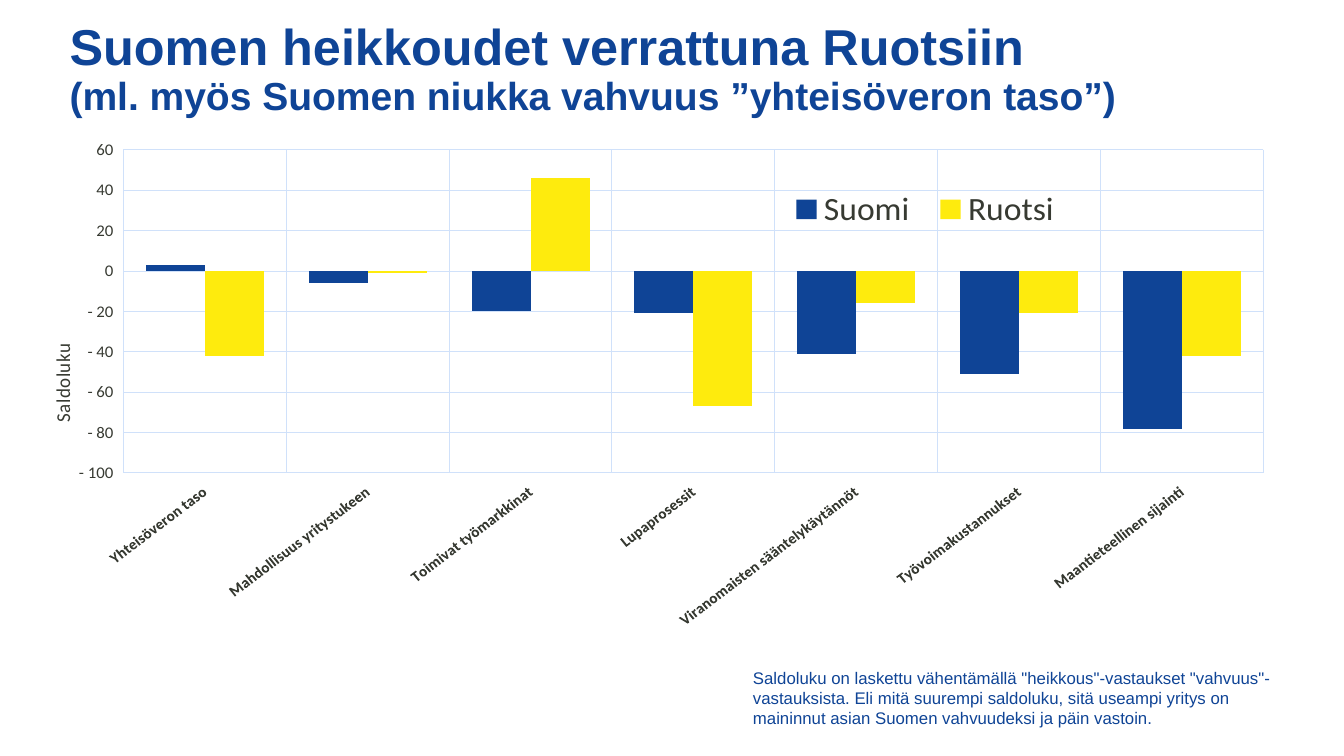
from lxml import etree
from pptx import Presentation
from pptx.chart.data import CategoryChartData
from pptx.dml.color import RGBColor
from pptx.enum.chart import XL_CHART_TYPE, XL_LEGEND_POSITION, XL_TICK_LABEL_POSITION, XL_TICK_MARK
from pptx.enum.text import MSO_ANCHOR, PP_ALIGN
from pptx.oxml.ns import qn
from pptx.util import Inches, Pt

COLUMNS = XL_CHART_TYPE.COLUMN_CLUSTERED
BOTTOM = XL_LEGEND_POSITION.BOTTOM
LABELS_LOW = XL_TICK_LABEL_POSITION.LOW
NO_TICKS = XL_TICK_MARK.NONE
TOP, MIDDLE = MSO_ANCHOR.TOP, MSO_ANCHOR.MIDDLE
LEFT = PP_ALIGN.LEFT
TITLE_ONLY = 5

COLORS = {"blue": "0F4496", "yellow": "FEEB0D", "text": "373A32", "grid": "D0E1FA"}

TITLE = [("Suomen heikkoudet verrattuna Ruotsiin", 36),
         ("(ml. myös Suomen niukka vahvuus ”yhteisöveron taso”)", 27.9)]
NOTE = ('Saldoluku on laskettu vähentämällä "heikkous"-vastaukset "vahvuus"-vastauksista. '
        "Eli mitä suurempi saldoluku, sitä useampi yritys on maininnut asian "
        "Suomen vahvuudeksi ja päin vastoin.")
AXIS_TITLE = "Saldoluku"
BALANCES = [  # factor, Suomi, Ruotsi
    ("Yhteisöveron taso", 3, -42),
    ("Mahdollisuus yritystukeen", -6, -1),
    ("Toimivat työmarkkinat", -20, 46),
    ("Lupaprosessit", -21, -67),
    ("Viranomaisten sääntelykäytännöt", -41, -16),
    ("Työvoimakustannukset", -51, -21),
    ("Maantieteellinen sijainti", -78, -42),
]
COUNTRIES = [("Suomi", "blue"), ("Ruotsi", "yellow")]

# Left, top, width, height in inches
TITLE_BOX = (0.59, 0.22, 12.36, 1.45)
CHART_BOX = (0.45, 1.37, 12.29, 4.87)
NOTE_BOX = (7.37, 6.72, 5.37, 0.4)
# Shares of the chart's size
PLOT_AREA = {"x": 0.063, "y": 0.025, "w": 0.92, "h": 0.68}
LEGEND_AREA = {"x": 0.59, "y": 0.1, "w": 0.24, "h": 0.1}
AXIS_TITLE_AREA = {"x": 0, "y": 0.43}


def color(name):
    return RGBColor.from_string(COLORS[name])


def style(font, size, name="text", face="Calibri", bold=False):
    font.size, font.name, font.bold = Pt(size), face, bold
    font.color.rgb = color(name)


def write(shape, lines, anchor=MIDDLE, spacing=None, bold=False):
    """Fill a shape with one paragraph of (text, size) lines."""
    frame = shape.text_frame
    frame.word_wrap = True
    frame.vertical_anchor = anchor
    para = frame.paragraphs[0]
    para.alignment, para.line_spacing = LEFT, spacing
    for index, (text, size) in enumerate(lines):
        if index:
            para.add_line_break()
        span = para.add_run()
        span.text = text
        style(span.font, size, "blue", "Arial", bold)
    return frame


def place(element, area, inner=False):
    """Give a chart part a manual layout in shares of the chart."""
    for old in element.findall(qn("c:layout")):
        element.remove(old)
    layout = etree.Element(qn("c:layout"))
    manual = etree.SubElement(layout, qn("c:manualLayout"))
    settings = [("layoutTarget", "inner")] if inner else []
    settings += [("xMode", "edge"), ("yMode", "edge"), *area.items()]
    for tag, value in settings:
        etree.SubElement(manual, qn("c:" + tag)).set("val", str(value))
    before = [child for child in element
              if child.tag in (qn("c:tx"), qn("c:legendPos"))]
    element.insert(len(before), layout)


def rotate(body, degrees):
    body.set("rot", str(degrees * 60000))
    body.set("vert", "horz")


def style_axis(axis, size, bold=False):
    axis.major_tick_mark = axis.minor_tick_mark = NO_TICKS
    axis.tick_label_position = LABELS_LOW
    style(axis.tick_labels.font, size, bold=bold)
    axis.has_major_gridlines = True
    for line in (axis.major_gridlines.format.line, axis.format.line):
        line.color.rgb = color("grid")
        line.width = Pt(0.75)


def add_balance_chart(page):
    data = CategoryChartData()
    factors, *values = zip(*BALANCES)
    data.categories = factors
    for (country, _), series_values in zip(COUNTRIES, values):
        data.add_series(country, series_values)
    chart = page.shapes.add_chart(COLUMNS, *map(Inches, CHART_BOX), data).chart
    style(chart.font, 10)
    chart.has_title = False

    plot = chart.plots[0]
    place(plot._element.getparent(), PLOT_AREA, inner=True)
    plot.gap_width, plot.overlap = 76, 0
    plot.vary_by_categories = False
    for series, (_, name) in zip(plot.series, COUNTRIES):
        series.invert_if_negative = False
        series.format.fill.solid()
        series.format.fill.fore_color.rgb = color(name)

    factor_axis, balance_axis = chart.category_axis, chart.value_axis
    style_axis(factor_axis, 11, bold=True)
    rotate(factor_axis._element.find(qn("c:txPr")).find(qn("a:bodyPr")), -38)

    style_axis(balance_axis, 12)
    balance_axis.format.line.fill.background()
    balance_axis.minimum_scale, balance_axis.maximum_scale = -100, 60
    balance_axis.major_unit = 20
    balance_axis.tick_labels.number_format = '0;"- "0;0'
    balance_axis.tick_labels.number_format_is_linked = False
    title = balance_axis.axis_title
    title.text_frame.text = AXIS_TITLE
    style(title.text_frame.paragraphs[0].runs[0].font, 14)
    rotate(title._element.find(".//" + qn("a:bodyPr")), -90)
    place(title._element, AXIS_TITLE_AREA)

    chart.has_legend = True
    chart.legend.position = BOTTOM
    chart.legend.include_in_layout = False
    style(chart.legend.font, 24)
    place(chart.legend._element, LEGEND_AREA)


def main():
    deck = Presentation()
    deck.slide_width, deck.slide_height = Inches(13.33), Inches(7.5)
    page = deck.slides.add_slide(deck.slide_layouts[TITLE_ONLY])

    title = page.shapes.title
    title.left, title.top, title.width, title.height = map(Inches, TITLE_BOX)
    frame = write(title, TITLE, anchor=TOP, spacing=0.9, bold=True)
    frame.margin_top = 0

    add_balance_chart(page)
    write(page.shapes.add_textbox(*map(Inches, NOTE_BOX)), [(NOTE, 12)])
    deck.save("out.pptx")


if __name__ == "__main__":
    main()
